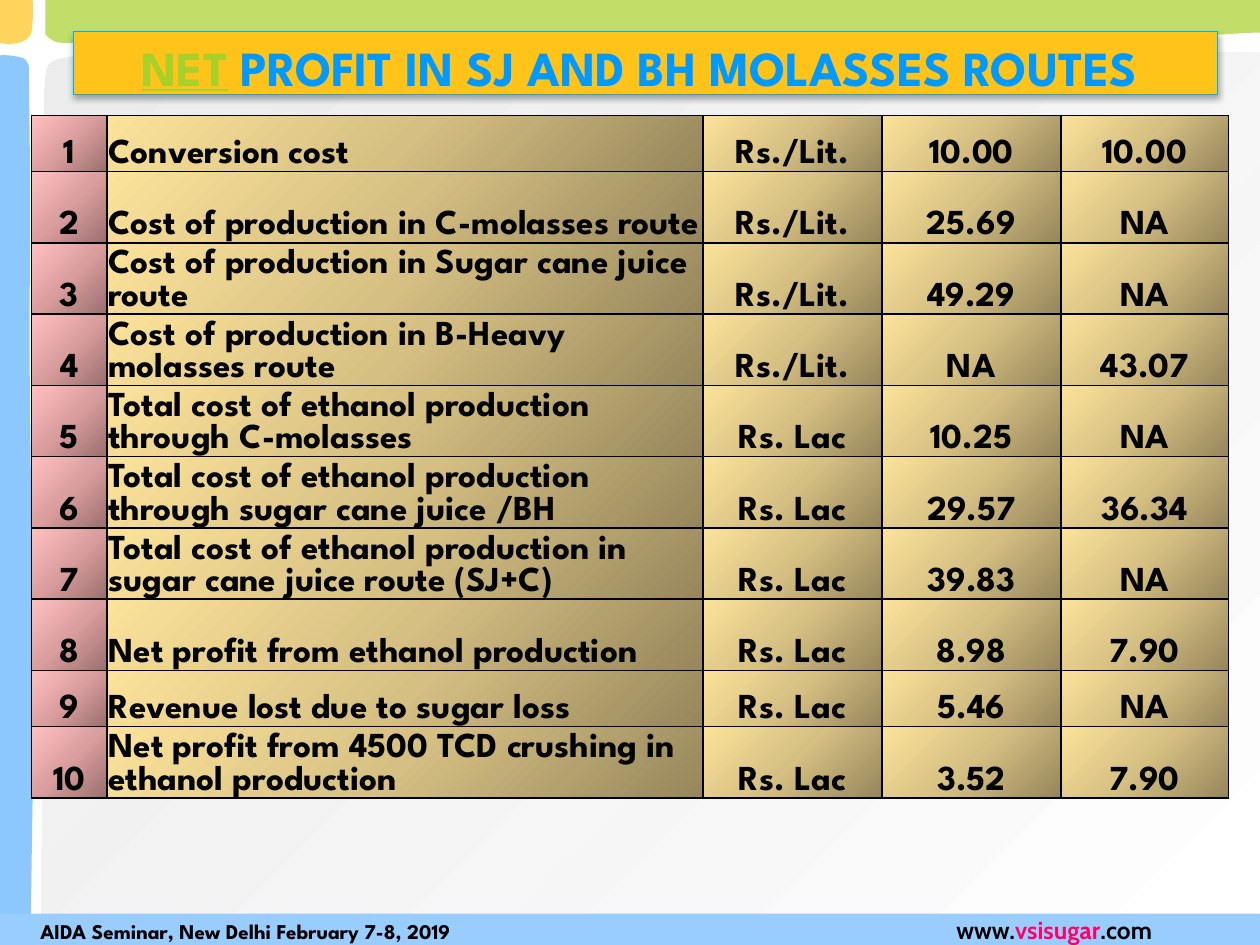
from lxml import etree
from pptx import Presentation
from pptx.dml.color import RGBColor
from pptx.enum.shapes import MSO_SHAPE
from pptx.enum.text import MSO_ANCHOR, PP_ALIGN
from pptx.oxml.ns import qn
from pptx.util import Inches, Pt

RECTANGLE = MSO_SHAPE.RECTANGLE
TOP, MIDDLE, BOTTOM = MSO_ANCHOR.TOP, MSO_ANCHOR.MIDDLE, MSO_ANCHOR.BOTTOM
LEFT, CENTER = PP_ALIGN.LEFT, PP_ALIGN.CENTER

BLACK = RGBColor(0x00, 0x00, 0x00)
WHITE = RGBColor(0xFF, 0xFF, 0xFF)
GREY = RGBColor(0xE6, 0xE6, 0xE6)
LIME = RGBColor(0xA8, 0xD0, 0x2A)
SKY = RGBColor(0x5C, 0xB1, 0xFE)
AMBER = RGBColor(0xFF, 0xC3, 0x19)
PALE_BLUE = RGBColor(0x99, 0xCC, 0xFF)
CYAN = RGBColor(0x00, 0xB0, 0xF0)
TITLE_BLUE = RGBColor(0x00, 0x99, 0xFF)
PINK = RGBColor(0xFF, 0x00, 0x66)
ROSE_STOPS = [(0, RGBColor(0x9A, 0x6F, 0x6F), 100), (50, RGBColor(0xDB, 0x9E, 0x9E), 100),
              (100, RGBColor(0xFF, 0xC0, 0xC0), 100)]
GOLD_STOPS = [(0, RGBColor(0x96, 0x86, 0x5C), 100), (50, RGBColor(0xD5, 0xBF, 0x82), 100),
              (100, RGBColor(0xFC, 0xE3, 0x9B), 100)]
PANEL_STOPS = [(0, GREY, 70), (100, WHITE, 100)]

HEADING_FONT, WEB_FONT = "League Spartan", "Cabin"
GRID_COLUMNS, GRID_ROWS = 100, 75

# Outlines in grid units: one point is a line, three points are a Bezier curve.
PANEL = [[(100, 75)], [(100, 4.2)], [(88.6, 3.8), (85.5, 4.2), (76, 4.2)],
         [(66.6, 4.2), (55, 4.3), (43.3, 4.2)], [(31.6, 4.1), (12.3, 4.1), (5.7, 4.5)],
         [(3.6, 4.8), (3.6, 4.9), (3.5, 7.3)], [(3.4, 9.6), (3.5, 11), (3.5, 18.2)],
         [(3.5, 25.6), (3.4, 41.2), (3.4, 50.6)], [(3.4, 60.1), (3.2, 66.2), (3.3, 75)],
         [(51.7, 75), (100, 75), (100, 75)]]
TOP_BAND = [[(100, 0)], [(100, 2.6)], [(100, 2.5), (92.8, 3.1), (83.2, 3.2)],
            [(73.6, 3.3), (53.1, 3), (42.6, 3.1)], [(32.1, 3.3), (26.5, 3.1), (20.3, 3.1)],
            [(14, 3.2), (7.7, 3.4), (4.9, 3.4)], [(4.1, 3.4), (3.6, 2.7), (3.6, 2.7)],
            [(3.6, 2.7), (3.6, 1.4), (3.6, 0)], [(100, 0)]]
LEFT_BAND = [[(0, 74.9)], [(2.5, 75)], [(2.4, 75), (2.5, 69.8), (2.6, 62.8)],
             [(2.6, 55.8), (2.5, 40.7), (2.4, 33)], [(2.3, 25.4), (2.4, 21.2), (2.4, 16.7)],
             [(2.4, 12.1), (2.3, 7.5), (2.3, 5.4)], [(2.3, 4.8), (1.8, 4.6), (1.8, 4.6)],
             [(0.7, 4.3), (0, 4.4), (0, 4.4)], [(0, 74.9)]]
CORNER = [[(0, 0)], [(2.6, 0)], [(2.7, 1.2), (2.5, 2.6), (2.5, 2.6)],
          [(2.3, 3.1), (1.9, 3.3), (1.5, 3.4)], [(0.7, 3.6), (0, 3.4), (0, 3.4)], [(0, 0)]]

COLUMN_WIDTHS = [6, 47.3, 14.2, 14.2, 13.3]
TALL_ROW, SHORT_ROW = 5.66, 4.45
SHORT_ITEMS = (1, 9)
ITEMS = [
    ("Conversion cost", "Rs./Lit.", "10.00", "10.00"),
    ("Cost of production in C-molasses route", "Rs./Lit.", "25.69", "NA"),
    ("Cost of production in Sugar cane juice route", "Rs./Lit.", "49.29", "NA"),
    ("Cost of production in B-Heavy molasses route", "Rs./Lit.", "NA", "43.07"),
    ("Total cost of ethanol production through C-molasses", "Rs. Lac", "10.25", "NA"),
    ("Total cost of ethanol production through sugar cane juice /BH", "Rs. Lac", "29.57", "36.34"),
    ("Total cost of ethanol production in sugar cane juice route (SJ+C)", "Rs. Lac", "39.83", "NA"),
    ("Net profit from ethanol production", "Rs. Lac", "8.98", "7.90"),
    ("Revenue lost due to sugar loss", "Rs. Lac", "5.46", "NA"),
    ("Net profit from 4500 TCD crushing in ethanol production", "Rs. Lac", "3.52", "7.90"),
]


def units(count):
    """Length of a number of grid units, each a tenth of an inch."""
    return Inches(count / 10)


def add_color(parent, color, opacity=100):
    node = etree.SubElement(parent, qn("a:srgbClr"), val=str(color))
    if opacity < 100:
        etree.SubElement(node, qn("a:alpha"), val=str(opacity * 1000))


def fill_gradient(target, properties, stops, angle):
    """Swap the target's empty fill for a linear gradient, angle clockwise."""
    target.fill.background()
    gradient = etree.Element(qn("a:gradFill"), rotWithShape="1")
    stop_list = etree.SubElement(gradient, qn("a:gsLst"))
    for position, color, opacity in stops:
        stop = etree.SubElement(stop_list, qn("a:gs"), pos=str(position * 1000))
        add_color(stop, color, opacity)
    etree.SubElement(gradient, qn("a:lin"), ang=str(angle * 60000), scaled="0")
    properties.replace(properties.find(qn("a:noFill")), gradient)


def fill_solid(shape, color, opacity=100):
    shape.fill.solid()
    shape.fill.fore_color.rgb = color
    if opacity < 100:
        node = shape.fill._xPr.find(".//" + qn("a:srgbClr"))
        etree.SubElement(node, qn("a:alpha"), val=str(opacity * 1000))


def bend_lines(shape, segments):
    """Join each three lines of a curved segment into one Bezier curve."""
    lines = iter(shape._element.findall(".//" + qn("a:lnTo")))
    for segment in segments:
        first, *others = [next(lines) for _ in segment]
        if others:
            first.tag = qn("a:cubicBezTo")
        for line in others:
            first.append(line[0])
            line.getparent().remove(line)


def add_outline(page, outline):
    (start,), *segments = outline
    builder = page.shapes.build_freeform(*map(units, start))
    builder.add_line_segments([(units(x), units(y)) for segment in segments for x, y in segment],
                              close=False)
    shape = builder.convert_to_shape()
    bend_lines(shape, segments)
    etree.SubElement(shape._element.find(".//" + qn("a:moveTo")).getparent(), qn("a:close"))
    shape.shadow.inherit = False
    shape.line.fill.background()
    return shape


def add_bar(page, left, top, width, height, color, anchor):
    bar = page.shapes.add_shape(RECTANGLE, *map(units, (left, top, width, height)))
    bar.shadow.inherit = False
    fill_solid(bar, color)
    bar.line.fill.background()
    bar.text_frame.word_wrap = True
    bar.text_frame.vertical_anchor = anchor
    return bar


def add_span(para, text, size, color=BLACK, font=HEADING_FONT, underline=False):
    span = para.add_run()
    span.text = text
    span.font.size, span.font.name = Pt(size), font
    span.font.bold, span.font.underline = True, underline
    span.font.color.rgb = color


def add_background(page):
    panel = add_outline(page, PANEL)
    fill_gradient(panel, panel._element.spPr, PANEL_STOPS, 45)
    for outline, color in ((TOP_BAND, LIME), (LEFT_BAND, SKY), (CORNER, AMBER)):
        fill_solid(add_outline(page, outline), color, 70)


def add_footer(page):
    footer = add_bar(page, 0, GRID_ROWS - 2.5, GRID_COLUMNS, 2.5, PALE_BLUE, MIDDLE)
    frame = footer.text_frame
    frame.margin_left = units(3.2)
    frame.margin_right = frame.margin_top = frame.margin_bottom = 0
    para = frame.paragraphs[0]
    para.alignment = LEFT
    tabs = etree.SubElement(para._p.get_or_add_pPr(), qn("a:tabLst"))
    etree.SubElement(tabs, qn("a:tab"), pos=str(units(72.7)), algn="l")
    add_span(para, "AIDA Seminar, New Delhi February 7-8, 2019\t", 12)
    for text, color in (("www.", BLACK), ("vsisugar", PINK), (".com", BLACK)):
        add_span(para, text, 14, color, WEB_FONT)


def add_title(page):
    title = add_bar(page, 5.83, 2.5, 90.8, 5, AMBER, TOP)
    title.line.color.rgb = CYAN
    title.line.width = Pt(0.75)
    effects = title._element.spPr.find(qn("a:effectLst"))
    shadow = etree.SubElement(effects, qn("a:outerShdw"), blurRad=str(Pt(3.5)),
                              dist=str(Pt(2.2)), dir=str(90 * 60000), rotWithShape="0")
    add_color(shadow, BLACK, 32)
    para = title.text_frame.paragraphs[0]
    para.alignment = CENTER
    add_span(para, "NET", 28, LIME, underline=True)
    add_span(para, " PROFIT IN SJ AND BH MOLASSES ROUTES ", 28, TITLE_BLUE)


def style_cell(cell, text, stops, alignment):
    cell.vertical_anchor = BOTTOM
    cell.margin_left = cell.margin_right = cell.margin_top = units(0.1)
    cell.margin_bottom = 0
    para = cell.text_frame.paragraphs[0]
    para.alignment = alignment
    add_span(para, text, 20)
    properties = cell._tc.get_or_add_tcPr()
    fill_gradient(cell, properties, stops, 225)
    for index, side in enumerate(("lnL", "lnR", "lnT", "lnB")):
        border = etree.Element(qn("a:" + side), w=str(Pt(1)))
        add_color(etree.SubElement(border, qn("a:solidFill")), BLACK)
        properties.insert(index, border)


def add_cost_table(page):
    heights = [SHORT_ROW if number in SHORT_ITEMS else TALL_ROW
               for number in range(1, len(ITEMS) + 1)]
    frame = page.shapes.add_table(len(ITEMS), len(COLUMN_WIDTHS), units(2.5), units(9.16),
                                  units(sum(COLUMN_WIDTHS)), units(sum(heights)))
    table = frame.table
    table.first_row = table.horz_banding = False
    for column, width in zip(table.columns, COLUMN_WIDTHS):
        column.width = units(width)
    for number, (item, height) in enumerate(zip(ITEMS, heights), 1):
        row = table.rows[number - 1]
        row.height = units(height)
        for index, (cell, text) in enumerate(zip(row.cells, (str(number), *item))):
            style_cell(cell, text, GOLD_STOPS if index else ROSE_STOPS,
                       LEFT if index == 1 else CENTER)


def main():
    deck = Presentation()
    deck.slide_width, deck.slide_height = units(GRID_COLUMNS), units(GRID_ROWS)
    page = deck.slides.add_slide(deck.slide_layouts[6])
    add_background(page)
    add_footer(page)
    add_title(page)
    add_cost_table(page)
    deck.save("out.pptx")


if __name__ == "__main__":
    main()
